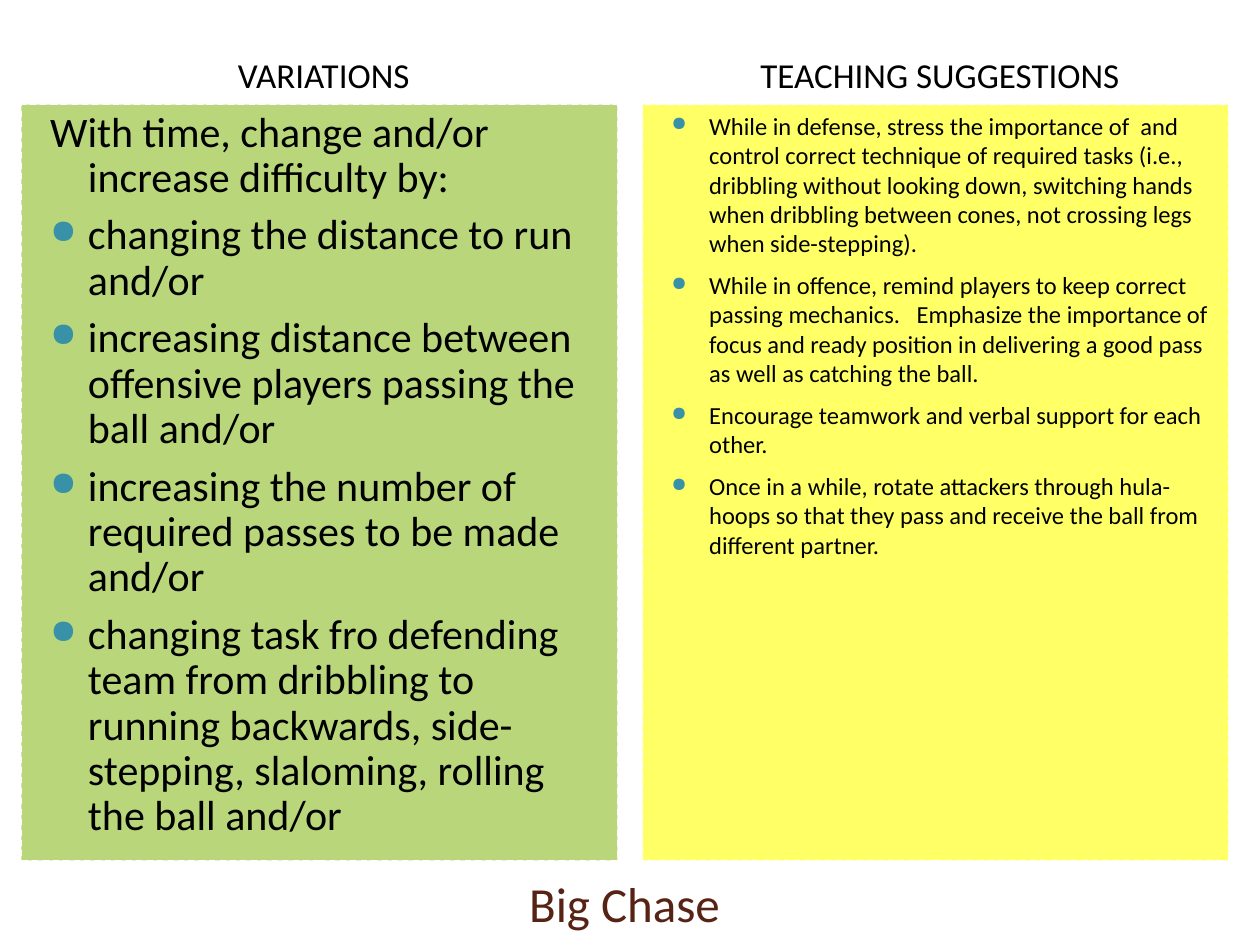
from dataclasses import dataclass

from lxml import etree
from pptx import Presentation
from pptx.dml.color import RGBColor
from pptx.enum import dml, shapes, text
from pptx.oxml.ns import qn
from pptx.util import Inches, Pt


@dataclass(frozen=True)
class Theme:
    font: str = "Calibri"
    ink: str = "000000"
    title_ink: str = "572314"
    paper: str = "FFFFFF"
    accent: str = "3891A7"
    green: str = "B9D77A"
    yellow: str = "FFFF66"
    title_size: float = 28
    heading_size: float = 20
    large_size: float = 24
    small_size: float = 14


THEME = Theme()
WIDTH, HEIGHT = 10, 7.5

# Rows (top, height) and columns (left, width) of the slide grid, in inches
HEADING_ROW, BODY_ROW, TITLE_ROW = (0.36, 0.47), (0.83, 6), (6.83, 0.67)
LEFT_COLUMN, RIGHT_COLUMN, TITLE_COLUMN = (0.17, 4.73), (5.1, 4.65), (0.5, 9)

VARIATIONS_INTRO = "With time, change and/or increase difficulty by:"
VARIATIONS = [
    "changing the distance to run and/or",
    "increasing distance between offensive players passing the ball and/or",
    "increasing the number of required passes to be made and/or",
    "changing task fro defending team from dribbling to running backwards, "
    "side-stepping, slaloming, rolling the ball and/or",
]
SUGGESTIONS = [
    "While in defense, stress the importance of  and control correct technique "
    "of required tasks (i.e., dribbling without looking down, switching hands "
    "when dribbling between cones, not crossing legs when side-stepping).",
    "While in offence, remind players to keep correct passing mechanics.   "
    "Emphasize the importance of focus and ready position in delivering a good "
    "pass as well as catching the ball.",
    "Encourage teamwork and verbal support for each other.",
    "Once in a while, rotate attackers through hula-hoops so that they pass "
    "and receive the ball from different partner.",
]


def rgb(value):
    return RGBColor.from_string(value)


def cell(column, row):
    return [Inches(v) for v in (column[0], row[0], column[1], row[1])]


def write(paragraph, wording, size, color=THEME.ink, align=text.PP_ALIGN.LEFT,
          before=0, spacing=1.0, margin=0, indent=0, bullet=False):
    """Fill a paragraph with one run and format both."""
    run = paragraph.add_run()
    run.text = wording
    run.font.name, run.font.size = THEME.font, Pt(size)
    run.font.color.rgb = rgb(color)
    paragraph.alignment = align
    paragraph.space_before, paragraph.line_spacing = Pt(before), spacing
    props = paragraph._p.get_or_add_pPr()
    props.set("marL", str(Inches(margin)))
    props.set("indent", str(Inches(indent)))
    if bullet:
        bullet_color = etree.SubElement(props, qn("a:buClr"))
        etree.SubElement(bullet_color, qn("a:srgbClr"), val=THEME.accent)
        etree.SubElement(props, qn("a:buSzPct"), val="80000")
        etree.SubElement(props, qn("a:buChar"), char="●")
    else:
        etree.SubElement(props, qn("a:buNone"))


def add_panel(slide, box, fill, anchor, dashed=False):
    """Draw a filled rectangle and return its text frame."""
    panel = slide.shapes.add_shape(shapes.MSO_SHAPE.RECTANGLE, *box)
    panel.shadow.inherit = False
    panel.fill.solid()
    panel.fill.fore_color.rgb = rgb(fill)
    panel.line.color.rgb = rgb(THEME.paper)
    panel.line.width = Pt(0.85)
    if dashed:
        panel.line.dash_style = dml.MSO_LINE.DASH
    frame = panel.text_frame
    frame.word_wrap, frame.vertical_anchor = True, anchor
    return frame


def add_column(slide, column, heading, items, fill, size, intro=None, spacing=1.0):
    """Place a heading above a coloured panel holding a bulleted list."""
    # Heading
    frame = add_panel(slide, cell(column, HEADING_ROW), THEME.paper,
                      text.MSO_ANCHOR.MIDDLE)
    write(frame.paragraphs[0], heading, THEME.heading_size,
          align=text.PP_ALIGN.CENTER, before=1, margin=0.07)

    # List, with an optional unbulleted opening line
    frame = add_panel(slide, cell(column, BODY_ROW), fill,
                      text.MSO_ANCHOR.TOP, dashed=True)
    lines = ([intro] if intro else []) + items
    for number, line in enumerate(lines):
        paragraph = frame.add_paragraph() if number else frame.paragraphs[0]
        write(paragraph, line, size, before=7, spacing=spacing,
              margin=0.43, indent=-0.3, bullet=line != intro)


def add_title(slide, box, wording):
    title = slide.shapes.title
    title.left, title.top, title.width, title.height = box
    title.text_frame.vertical_anchor = text.MSO_ANCHOR.MIDDLE
    write(title.text_frame.paragraphs[0], wording, THEME.title_size,
          color=THEME.title_ink, align=text.PP_ALIGN.CENTER)


def main():
    deck = Presentation()
    deck.slide_width, deck.slide_height = Inches(WIDTH), Inches(HEIGHT)
    slide = deck.slides.add_slide(deck.slide_layouts[5])
    slide.background.fill.solid()
    slide.background.fill.fore_color.rgb = rgb(THEME.paper)

    add_title(slide, cell(TITLE_COLUMN, TITLE_ROW), "Big Chase ")
    add_column(slide, LEFT_COLUMN, "VARIATIONS", VARIATIONS, THEME.green,
               THEME.large_size, intro=VARIATIONS_INTRO, spacing=0.9)
    add_column(slide, RIGHT_COLUMN, "TEACHING SUGGESTIONS", SUGGESTIONS,
               THEME.yellow, THEME.small_size)
    deck.save("out.pptx")


if __name__ == "__main__":
    main()
